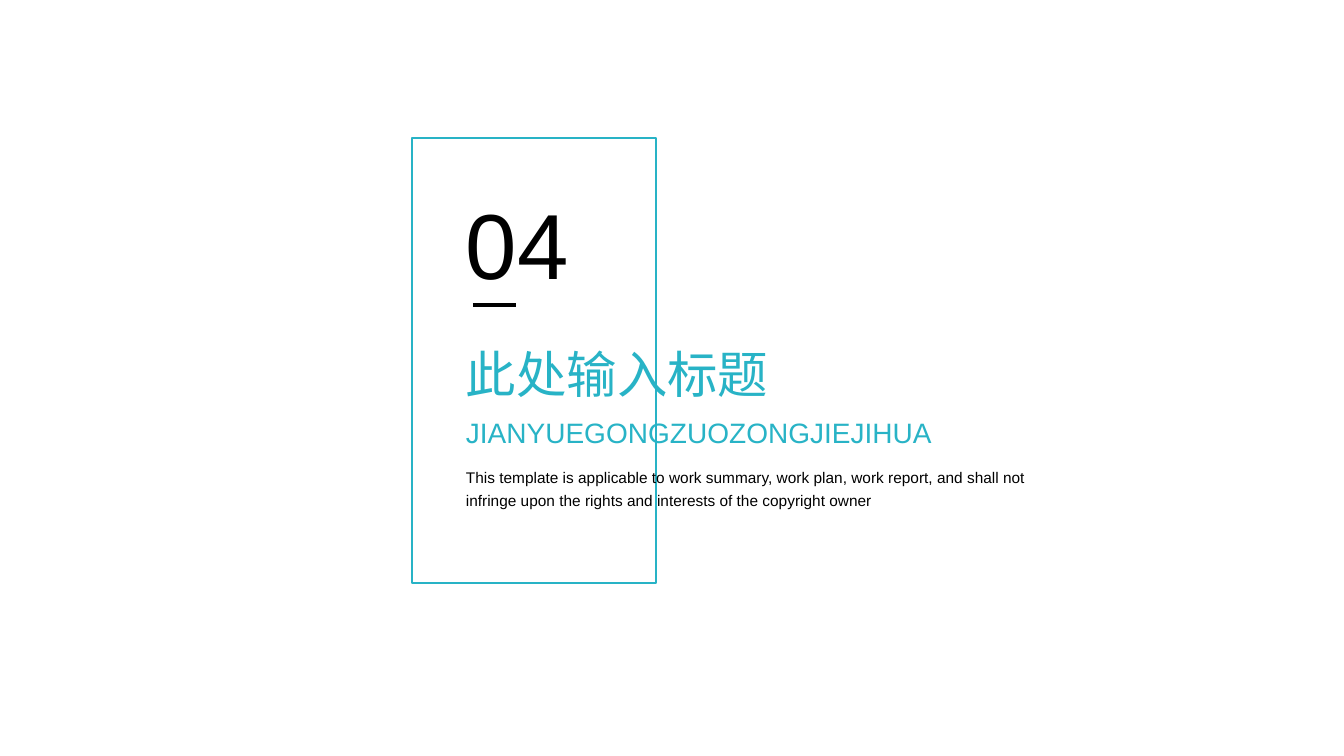
from pptx import Presentation
from pptx.dml.color import RGBColor
from pptx.enum.shapes import MSO_CONNECTOR, MSO_SHAPE
from pptx.enum.text import MSO_AUTO_SIZE
from pptx.oxml.ns import qn
from pptx.util import Pt
from lxml import etree

RECT = MSO_SHAPE.RECTANGLE
STRAIGHT = MSO_CONNECTOR.STRAIGHT
GROW = MSO_AUTO_SIZE.SHAPE_TO_FIT_TEXT
WIDE, HIGH = 1344, 756
SCALE = 12192000 / WIDE
LEFT = 456
FONT = "Arial"
COLORS = {"teal": "28B3C6", "black": "000000"}


def px(*nums):
    """Turn px lengths into EMU."""
    return [round(num * SCALE) for num in nums]


def color(name):
    """Look up a named colour."""
    return RGBColor.from_string(COLORS[name])


def add_frame(slide, box, hue, width):
    """Draw an unfilled rectangle."""
    frame = slide.shapes.add_shape(RECT, *px(*box))
    frame.shadow.inherit = False
    frame.fill.background()
    frame.line.color.rgb = color(hue)
    frame.line.width = Pt(width)


def add_rule(slide, ends, hue, width):
    """Draw a straight line without a shadow."""
    rule = slide.shapes.add_connector(STRAIGHT, *px(*ends))
    rule.line.color.rgb = color(hue)
    rule.line.width = Pt(width)
    etree.SubElement(rule._element.spPr, qn("a:effectLst"))


def add_text(slide, text, box, size, hue, wrap=True, space=None):
    """Place one paragraph at the shared left edge."""
    frame = slide.shapes.add_textbox(*px(LEFT, *box)).text_frame
    frame.word_wrap = wrap
    frame.auto_size = GROW
    para = frame.paragraphs[0]
    para.text = text
    para.line_spacing = space
    para.font.name = FONT
    para.font.size = Pt(size)
    para.font.color.rgb = color(hue)


def main():
    """Build the section slide and save it."""
    deck = Presentation()
    deck.slide_width, deck.slide_height = px(WIDE, HIGH)
    slide = deck.slides.add_slide(deck.slide_layouts[6])
    add_frame(slide, (412, 138, 244, 445), "teal", 1.5)
    add_text(slide, "04", (182, 124, 122), 66, "black", wrap=False)
    add_text(slide, "此处输入标题", (338, 326, 72), 36, "teal", wrap=False)
    add_rule(slide, (473, 305, 516, 305), "black", 3)
    add_text(slide, "JIANYUEGONGZUOZONGJIEJIHUA", (411, 502, 44), 20, "teal")
    add_text(
        slide,
        "This template is applicable to work summary, work plan, work report, "
        "and shall not infringe upon the rights and interests of the copyright owner",
        (460, 592, 55), 11, "black", space=1.2,
    )
    deck.save("out.pptx")


if __name__ == "__main__":
    main()
